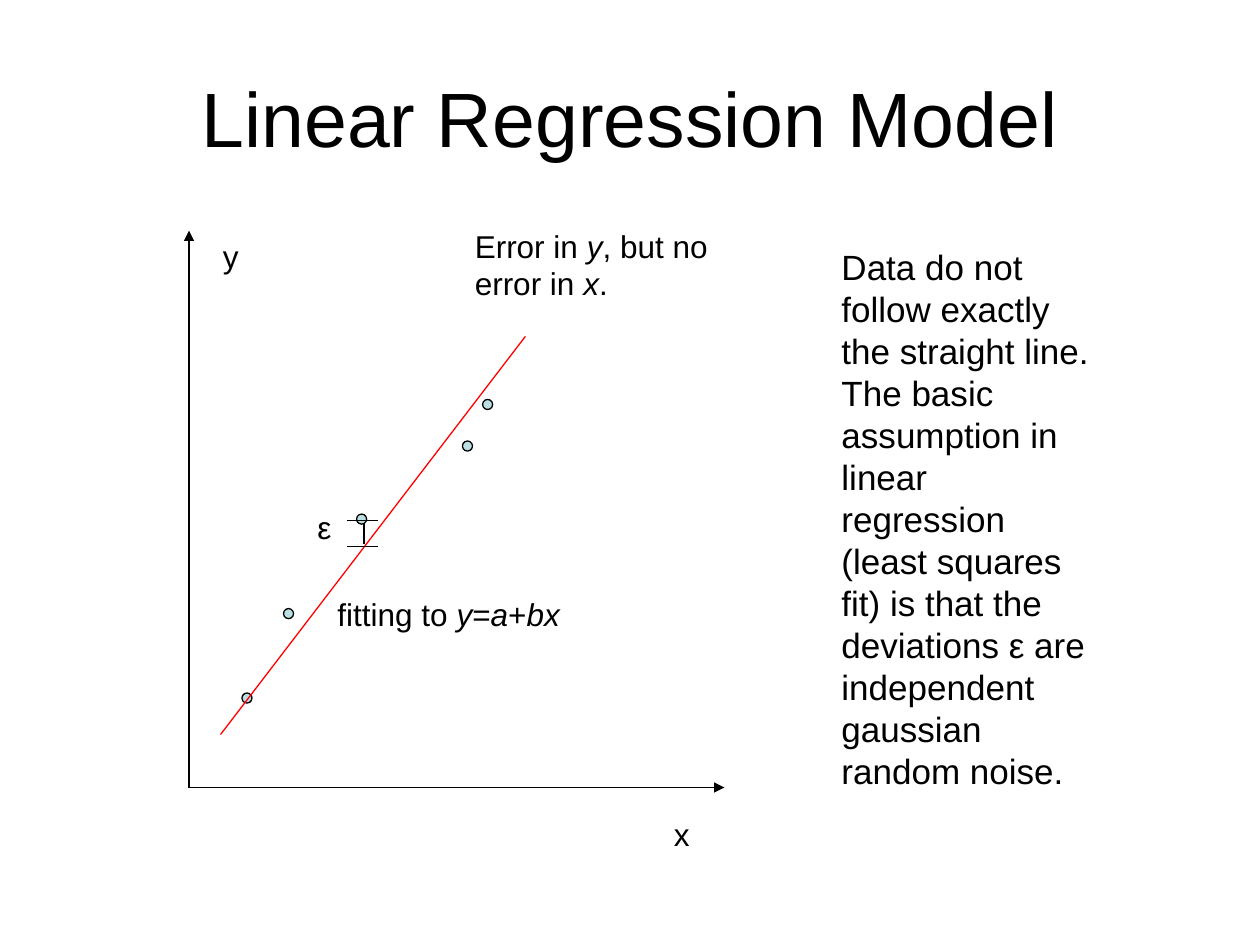
from lxml.etree import SubElement
from pptx import Presentation
from pptx.dml.color import RGBColor
from pptx.enum.shapes import MSO_CONNECTOR as CONNECTOR, MSO_SHAPE as SHAPE
from pptx.enum.text import MSO_ANCHOR as ANCHOR, MSO_AUTO_SIZE as AUTO_SIZE, PP_ALIGN as ALIGN
from pptx.oxml.ns import qn
from pptx.util import Inches, Pt

BLACK = RGBColor(0x00, 0x00, 0x00)
RED = RGBColor(0xFF, 0x00, 0x00)
PALE_BLUE = RGBColor(0xBB, 0xE0, 0xE3)
FONT = "Arial"
DOT_SIZE = 0.08

prs = Presentation()
prs.slide_width, prs.slide_height = Inches(10), Inches(7.5)
slide = prs.slides.add_slide(prs.slide_layouts[5])
shapes = slide.shapes


def add_line(x1, y1, x2, y2, color=BLACK, arrow=False):
    line = shapes.add_connector(CONNECTOR.STRAIGHT, Inches(x1), Inches(y1), Inches(x2), Inches(y2))
    line.line.color.rgb = color
    line.line.width = Pt(0.75)
    properties = line._element.spPr
    if arrow:
        SubElement(properties.find(qn("a:ln")), qn("a:tailEnd"), type="triangle")
    SubElement(properties, qn("a:effectLst"))


def add_runs(paragraph, size, runs):
    for text, italic in runs:
        run = paragraph.add_run()
        run.text = text
        run.font.name = FONT
        run.font.size = Pt(size)
        run.font.italic = italic
        run.font.color.rgb = BLACK


title = shapes.title
title.left, title.top, title.width, title.height = Inches(0.5), Inches(0.3), Inches(9), Inches(1.25)
title.text_frame.vertical_anchor = ANCHOR.MIDDLE
heading = title.text_frame.paragraphs[0]
heading.alignment = ALIGN.CENTER
add_runs(heading, 44, [("Linear Regression Model", False)])

for x_end, y_end in [(1.5, 1.83), (5.75, 6.25)]:
    add_line(1.5, 6.25, x_end, y_end, arrow=True)

for x, y in [(1.92, 5.5), (2.25, 4.83), (2.83, 4.08), (3.83, 3.17), (3.67, 3.5)]:
    dot = shapes.add_shape(SHAPE.OVAL, Inches(x), Inches(y), Inches(DOT_SIZE), Inches(DOT_SIZE))
    dot.shadow.inherit = False
    dot.fill.solid()
    dot.fill.fore_color.rgb = PALE_BLUE
    dot.line.color.rgb = BLACK
    dot.line.width = Pt(0.75)

add_line(1.75, 5.83, 4.17, 2.67, RED)

for y in (4.13, 4.34):
    add_line(2.75, y, 3, y)
add_line(2.89, 4.15, 2.89, 4.32)

assumption = (
    "Data do not follow exactly the straight line.  The basic assumption in linear regression "
    "(least squares fit) is that the deviations ε are independent gaussian random noise."
)
labels = [
    (5.25, 6.42, 0.42, 0.4, 18, [("x", False)]),
    (1.67, 1.83, 0.92, 0.4, 18, [("y", False)]),
    (2.58, 4.67, 2.42, 0.4, 18,
     [("fitting to ", False), ("y", True), ("=", False), ("a", True), ("+", False), ("bx", True)]),
    (2.42, 3.98, 0.33, 0.4, 18, [("ε", False)]),
    (6.58, 1.9, 2.25, 4.43, 20, [(assumption, False)]),
    (3.67, 1.75, 2.17, 0.7, 18,
     [("Error in ", False), ("y", True), (", but no error in ", False), ("x", True), (".", False)]),
]
for left, top, width, height, size, runs in labels:
    label = shapes.add_textbox(Inches(left), Inches(top), Inches(width), Inches(height))
    label.text_frame.word_wrap = True
    label.text_frame.auto_size = AUTO_SIZE.SHAPE_TO_FIT_TEXT
    add_runs(label.text_frame.paragraphs[0], size, runs)

prs.save("out.pptx")
